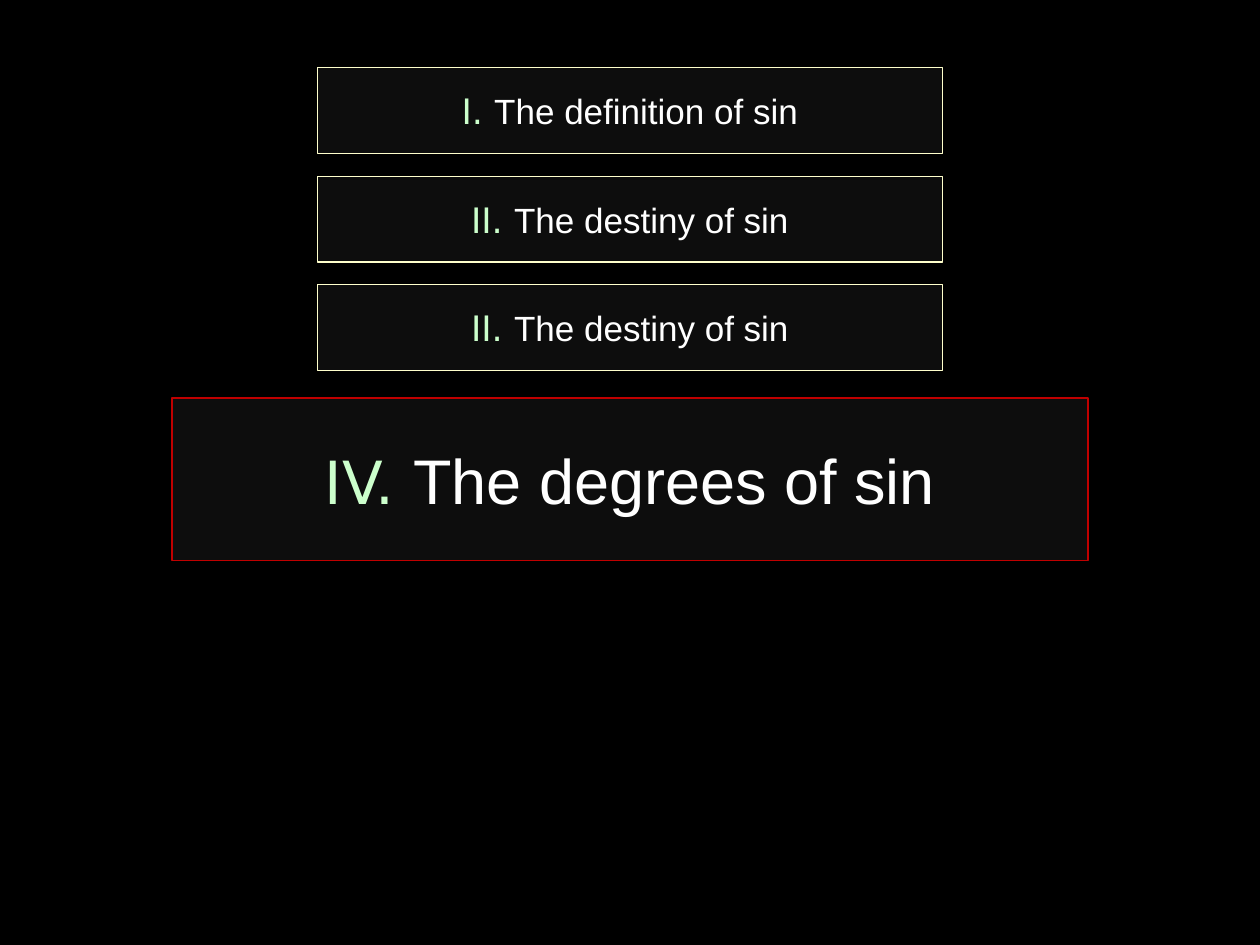
from typing import NamedTuple

from pptx import Presentation
from pptx.dml.color import RGBColor
from pptx.enum.shapes import MSO_SHAPE
from pptx.enum.text import MSO_ANCHOR, PP_ALIGN
from pptx.util import Pt

COLORS = {
    "background": "000000",
    "panel": "0D0D0D",
    "border": "FFFFCC",
    "current": "C00000",
    "numeral": "CCFFCC",
    "heading": "FFFFFF",
}
SLIDE_WIDTH, SLIDE_HEIGHT = 720, 540
FIRST_TOP, PITCH = 38.7, 62


class Point(NamedTuple):
    numeral: str
    heading: str
    top: float
    width: float = 357
    height: float = 49
    border: str = "border"
    numeral_size: float = 20
    heading_size: float = 20


def color(name: str) -> RGBColor:
    return RGBColor.from_string(COLORS[name])


def add_text(paragraph, text: str, *, font: str, size: float, fill: str) -> None:
    run = paragraph.add_run()
    run.text = text
    run.font.name = font
    run.font.size = Pt(size)
    run.font.color.rgb = color(fill)


def draw_point(slide, point: Point) -> None:
    panel = slide.shapes.add_shape(
        MSO_SHAPE.RECTANGLE,
        Pt((SLIDE_WIDTH - point.width) / 2),
        Pt(point.top),
        Pt(point.width),
        Pt(point.height),
    )
    panel.shadow.inherit = False
    panel.fill.solid()
    panel.fill.fore_color.rgb = color("panel")
    panel.line.color.rgb = color(point.border)
    panel.line.width = Pt(0.75)
    frame = panel.text_frame
    frame.word_wrap = True
    frame.vertical_anchor = MSO_ANCHOR.MIDDLE
    paragraph = frame.paragraphs[0]
    paragraph.alignment = PP_ALIGN.CENTER
    add_text(paragraph, f"{point.numeral} ", font="DejaVu Sans",
             size=point.numeral_size, fill="numeral")
    add_text(paragraph, point.heading, font="Arial",
             size=point.heading_size, fill="heading")


def main() -> None:
    deck = Presentation()
    deck.slide_width, deck.slide_height = Pt(SLIDE_WIDTH), Pt(SLIDE_HEIGHT)
    slide = deck.slides.add_slide(deck.slide_layouts[6])
    slide.background.fill.solid()
    slide.background.fill.fore_color.rgb = color("background")

    earlier_points = [
        ("I.", "The definition of sin"),
        ("II.", "The destiny of sin"),
        ("II.", "The destiny of sin"),
    ]
    for row, (numeral, heading) in enumerate(earlier_points):
        draw_point(slide, Point(numeral, heading, FIRST_TOP + row * PITCH))
    draw_point(slide, Point("IV.", "The degrees of sin", 227.5, 523.4, 92.9,
                            "current", 34, 36))
    deck.save("out.pptx")


if __name__ == "__main__":
    main()
